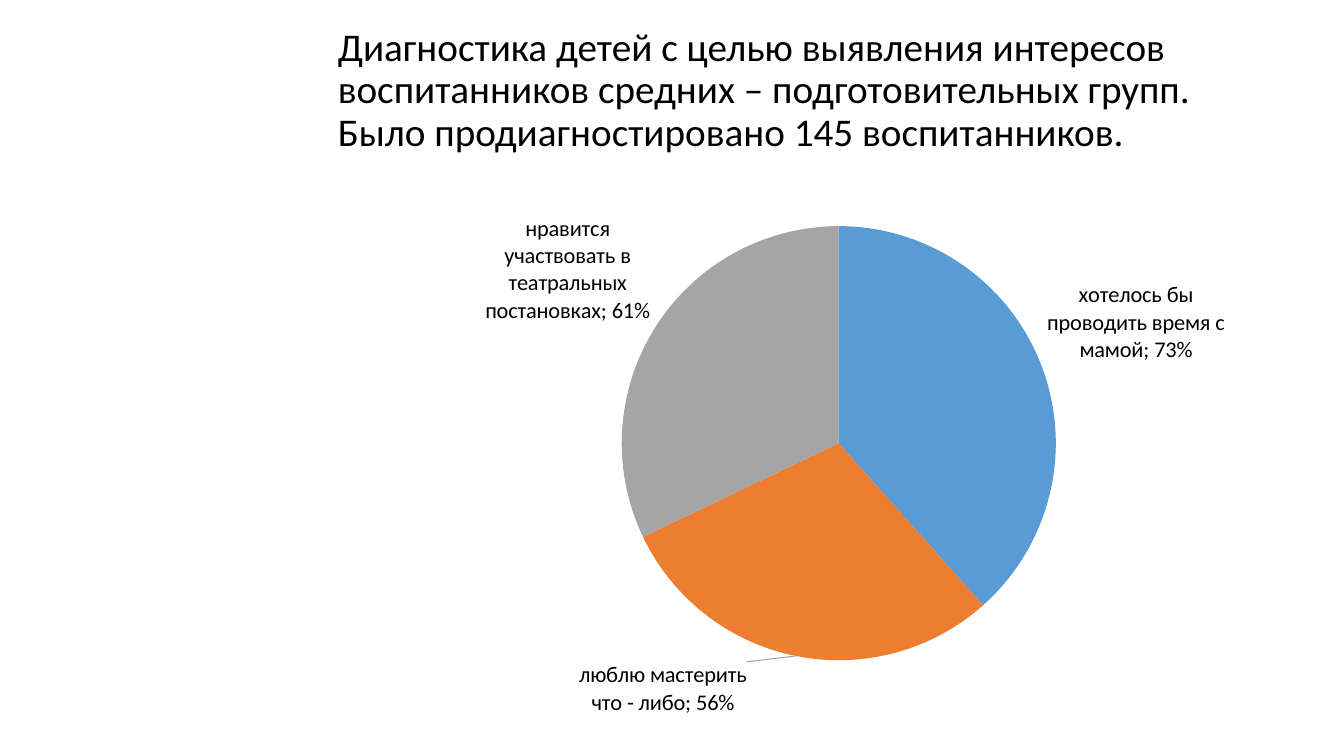
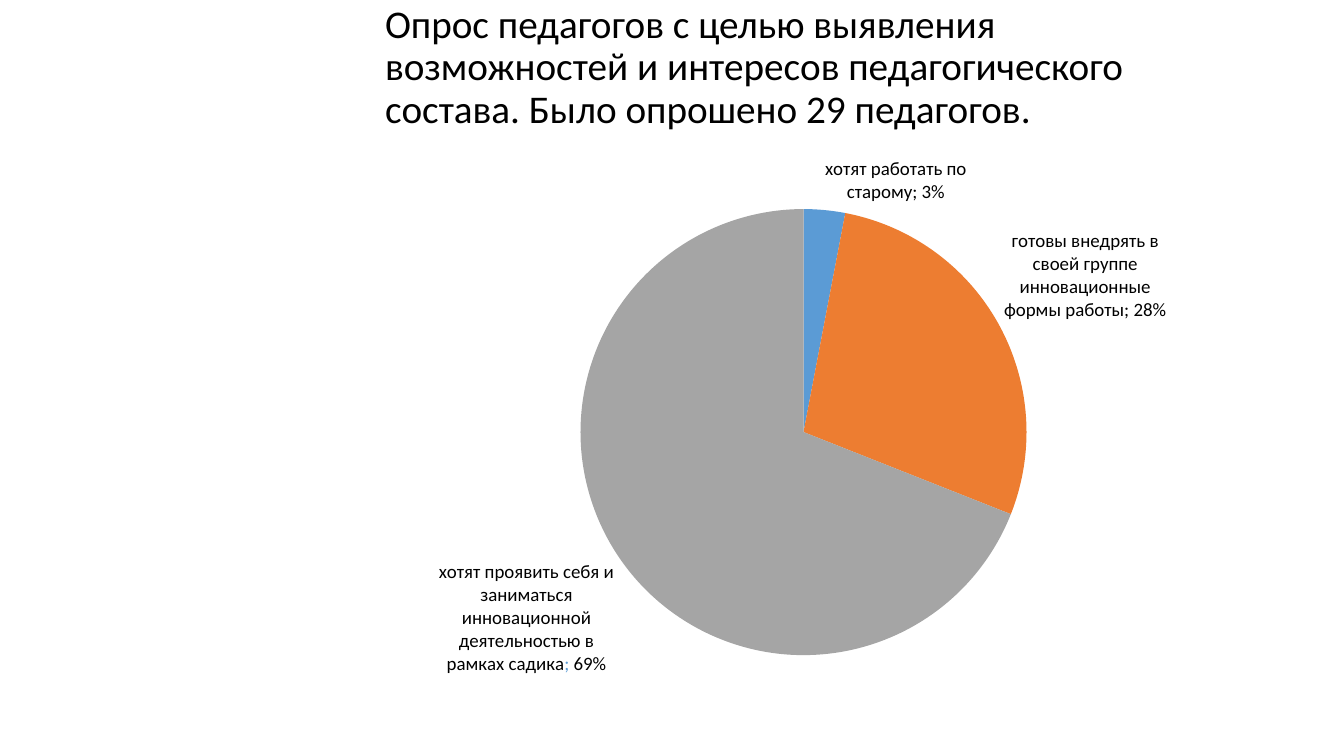
from dataclasses import dataclass

from lxml.etree import SubElement
from pptx import Presentation
from pptx.chart.data import CategoryChartData
from pptx.dml.color import RGBColor as RGB
from pptx.enum.chart import XL_CHART_TYPE as CHART, XL_LABEL_POSITION as POS
from pptx.enum.text import MSO_ANCHOR as ANCHOR, MSO_AUTO_SIZE as AUTO, PP_ALIGN as ALIGN
from pptx.oxml import parse_xml
from pptx.oxml.ns import nsdecls, qn
from pptx.util import Cm, Pt


@dataclass(frozen=True)
class Theme:
    font: str = "Calibri"
    text: RGB = RGB(0x00, 0x00, 0x00)
    accent: RGB = RGB(0x5B, 0x9B, 0xD5)
    slices: tuple = (RGB(0x5B, 0x9B, 0xD5), RGB(0xED, 0x7D, 0x31), RGB(0xA5, 0xA5, 0xA5))
    leader: str = "A6A6A6"
    title_size: float = 28


theme = Theme()


def add_run(p, text, size, color=theme.text):
    r = p.add_run()
    r.text = text
    r.font.name, r.font.size, r.font.color.rgb = theme.font, Pt(size), color
    r.font.bold = False


def manual_layout(**values):
    """Build a c:layout element; 'target' sets the inner plot area, the rest are fractions."""
    layout = parse_xml(f"<c:layout {nsdecls('c')}><c:manualLayout/></c:layout>")
    for tag, value in values.items():
        SubElement(layout[0], qn(f"c:{tag}")).set("val", str(value))
    return layout


# Boxes are left, top, width, height; the pie is centre x, centre y, radius. All in cm.
slides = [
    dict(
        title="Диагностика детей с целью выявления интересов воспитанников средних – "
              "подготовительных групп. Было продиагностировано 145 воспитанников.",
        title_box=(8.26, 1.02, 23.27, 3.68), title_inset=1.25,
        chart_box=(8.56, 3.99, 24.18, 14.48), pie=(21.14, 11.17, 5.47), label_size=16,
        answers={
            "хотелось бы проводить время с мамой": 0.73,
            "люблю мастерить что - либо": 0.56,
            "нравится участвовать в театральных постановках": 0.61,
        },
        shifted={1: -0.05}, accented=None,
    ),
    dict(
        title="Опрос педагогов с целью выявления возможностей и интересов "
              "педагогического состава. Было опрошено 29 педагогов.",
        title_box=(9.45, 0.71, 22.1, 3.68), title_inset=1.8,
        chart_box=(7.77, 3.07, 23.77, 15.32), pie=(20.25, 10.89, 5.62), label_size=13.5,
        answers={
            "хотят работать по старому": 0.03,
            "готовы внедрять в своей группе инновационные формы работы": 0.28,
            "хотят проявить себя и заниматься инновационной деятельностью в рамках садика": 0.69,
        },
        shifted={}, accented=2,
    ),
]

prs = Presentation()
prs.slide_width, prs.slide_height = Cm(33.87), Cm(19.05)

for page in slides:
    s = prs.slides.add_slide(prs.slide_layouts[5])

    title = s.shapes.title
    title.left, title.top, title.width, title.height = map(Cm, page["title_box"])
    tf = title.text_frame
    tf.word_wrap, tf.auto_size, tf.vertical_anchor = True, AUTO.NONE, ANCHOR.MIDDLE
    tf.margin_bottom = Cm(page["title_inset"])
    p = tf.paragraphs[0]
    p.alignment, p.line_spacing = ALIGN.LEFT, 0.9
    add_run(p, page["title"], theme.title_size)

    data = CategoryChartData(number_format="0%")
    data.categories = list(page["answers"])
    data.add_series("Series 1", list(page["answers"].values()))
    left, top, width, height = page["chart_box"]
    chart = s.shapes.add_chart(CHART.PIE, *map(Cm, page["chart_box"]), data).chart
    chart.has_legend = chart.has_title = False
    chart.font.name, chart.font.size = theme.font, Pt(page["label_size"])
    chart.font.color.rgb = theme.text
    chart.plots[0].vary_by_categories = True

    x, y, radius = page["pie"]
    plot_area = chart.element.find(f".//{qn('c:plotArea')}")
    for old in plot_area.findall(qn("c:layout")):
        plot_area.remove(old)
    plot_area.insert(0, manual_layout(
        layoutTarget="inner", xMode="edge", yMode="edge",
        x=round((x - radius - left) / width, 4), y=round((y - radius - top) / height, 4),
        w=round(2 * radius / width, 4), h=round(2 * radius / height, 4)))

    series = chart.plots[0].series[0]
    for i, color in enumerate(theme.slices):
        fill = series.points[i].format.fill
        fill.solid()
        fill.fore_color.rgb = color

    labels = series.data_labels
    labels.show_value = labels.show_category_name = True
    labels.number_format, labels.number_format_is_linked = "0%", False
    labels.position = POS.OUTSIDE_END

    if page["accented"] is not None:
        i = page["accented"]
        answer, share = list(page["answers"].items())[i]
        label = series.points[i].data_label
        p = label.text_frame.paragraphs[0]
        for text, color in ((answer, theme.text), ("; ", theme.accent), (f"{share:.0%}", theme.text)):
            add_run(p, text, page["label_size"], color)
        label.position = POS.OUTSIDE_END

    for i, dx in page["shifted"].items():
        series.points[i].data_label.position = POS.OUTSIDE_END
        idx = chart.element.xpath(f".//c:dLbl/c:idx[@val='{i}']")[0]
        idx.addnext(manual_layout(x=dx, y=0))

    for tag in chart.element.xpath(".//c:showCatName"):
        tag.set("val", "1")
    for tag in chart.element.xpath(".//c:showBubbleSize"):
        tag.addnext(parse_xml(f"<c:separator {nsdecls('c')}>; </c:separator>"))
    for tag in chart.element.xpath(".//c:showLeaderLines"):
        tag.set("val", "1")
        tag.addnext(parse_xml(
            f"<c:leaderLines {nsdecls('c', 'a')}><c:spPr><a:ln w='9525'><a:solidFill>"
            f"<a:srgbClr val='{theme.leader}'/></a:solidFill></a:ln></c:spPr></c:leaderLines>"))

prs.save("out.pptx")
